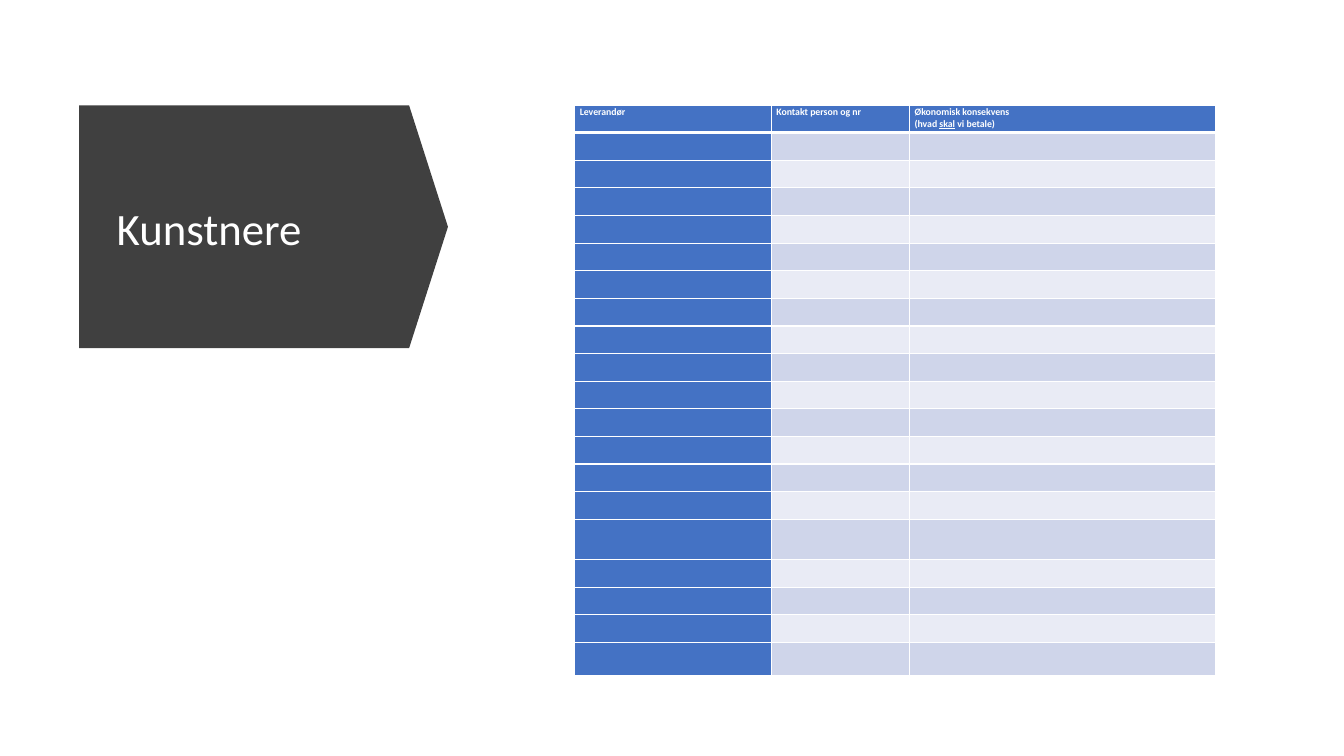
from typing import NamedTuple

from lxml import etree
from pptx import Presentation
from pptx import util as u
from pptx.dml.color import RGBColor
from pptx.enum import shapes, text
from pptx.oxml.ns import qn

EMU_PER_PX = 3175
FONT = "Calibri"
WHITE, CHARCOAL, BLUE = "FFFFFF", "404040", "4472C4"
BANDS = ("CFD5EA", "E9EBF5")
CELL_SIZE = 7
ROW_HEIGHT = 79
ROW_COUNT = 20
TALL_ROWS = {15: 115, 19: 95}


class Box(NamedTuple):
    left: int
    top: int
    width: int
    height: int


class Column(NamedTuple):
    width: int
    heading: list[list[str]]


ARROW = Box(406, 121, 694, 1054)
TITLE = Box(305, 380, 841, 562)
TABLE_LEFT, TABLE_TOP = 1642, 300
UNDERLINED = "skal"
COLUMNS = [
    Column(562, [["Leverandør"]]),
    Column(395, [["Kontakt person og nr"]]),
    Column(873, [["Økonomisk konsekvens"], ["(hvad ", UNDERLINED, " vi betale)"]]),
]


def px(length: int) -> u.Emu:
    return u.Emu(length * EMU_PER_PX)


def place(box: Box) -> list[u.Emu]:
    return [px(length) for length in box]


def color(value: str) -> RGBColor:
    return RGBColor.from_string(value)


def format_run(r, size: int, bold: bool = False) -> None:
    r.font.name = FONT
    r.font.size = u.Pt(size)
    r.font.bold = bold
    r.font.color.rgb = color(WHITE)


def draw_arrow(slide) -> None:
    sp = slide.shapes.add_shape(shapes.MSO_SHAPE.DOWN_ARROW, *place(ARROW))
    sp.rotation = 270
    sp.adjustments[0] = 1
    sp.adjustments[1] = 0.16
    sp.shadow.inherit = False
    sp.fill.solid()
    sp.fill.fore_color.rgb = color(CHARCOAL)
    sp.line.fill.background()


def draw_title(slide) -> None:
    tf = slide.shapes.add_textbox(*place(TITLE)).text_frame
    tf.word_wrap = True
    tf.vertical_anchor = text.MSO_ANCHOR.MIDDLE
    tf.text = "Kunstnere"
    p = tf.paragraphs[0]
    p.line_spacing = 0.9
    format_run(p.runs[0], 32)


def set_borders(cell, top: int, bottom: int) -> None:
    tc_pr = cell._tc.get_or_add_tcPr()
    widths = {"a:lnL": 1, "a:lnR": 1, "a:lnT": top, "a:lnB": bottom}
    for i, (tag, width) in enumerate(widths.items()):
        ln = etree.Element(qn(tag), w=str(u.Pt(width)))
        fill = etree.SubElement(ln, qn("a:solidFill"))
        etree.SubElement(fill, qn("a:srgbClr"), val=WHITE)
        tc_pr.insert(i, ln)


def write_heading(cell, lines: list[list[str]]) -> None:
    tf = cell.text_frame
    for i, line in enumerate(lines):
        p = tf.paragraphs[0] if i == 0 else tf.add_paragraph()
        for part in line:
            r = p.add_run()
            r.text = part
            format_run(r, CELL_SIZE, bold=True)
            if part == UNDERLINED:
                r.font.underline = True


def style_cell(cell, row: int, col: int) -> None:
    cell.margin_left = cell.margin_right = u.Inches(0.05)
    cell.margin_top, cell.margin_bottom = u.Inches(0.01), 0
    cell.fill.solid()
    is_heading = row == 0 or col == 0
    cell.fill.fore_color.rgb = color(BLUE if is_heading else BANDS[(row - 1) % 2])
    set_borders(cell, top=3 if row == 1 else 1, bottom=3 if row == 0 else 1)
    if row == 0:
        write_heading(cell, COLUMNS[col].heading)
    else:
        p = cell.text_frame.paragraphs[0]
        etree.SubElement(p._p, qn("a:endParaRPr"), sz=str(CELL_SIZE * 100))


def draw_table(slide) -> None:
    heights = [TALL_ROWS.get(row, ROW_HEIGHT) for row in range(ROW_COUNT)]
    box = Box(TABLE_LEFT, TABLE_TOP, sum(c.width for c in COLUMNS), sum(heights))
    table = slide.shapes.add_table(ROW_COUNT, len(COLUMNS), *place(box)).table
    table.horz_banding = False
    for col, column in enumerate(COLUMNS):
        table.columns[col].width = px(column.width)
    for row, height in enumerate(heights):
        table.rows[row].height = px(height)
        for col in range(len(COLUMNS)):
            style_cell(table.cell(row, col), row, col)


def main() -> None:
    prs = Presentation()
    prs.slide_width, prs.slide_height = px(3840), px(2160)
    slide = prs.slides.add_slide(prs.slide_layouts[6])
    draw_arrow(slide)
    draw_title(slide)
    draw_table(slide)
    prs.save("out.pptx")


if __name__ == "__main__":
    main()
